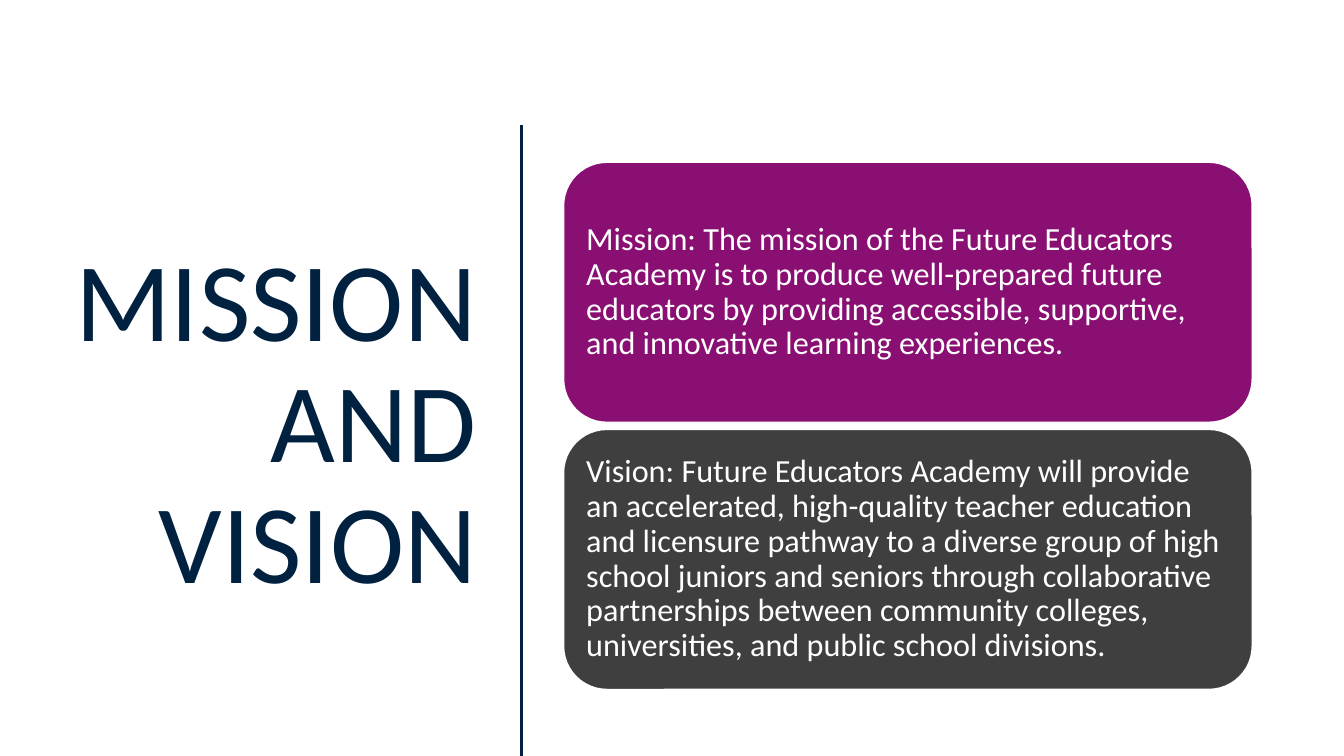
"""Build the Mission and Vision slide: a title, a divider and two statement cards."""
from dataclasses import dataclass

from lxml.etree import SubElement
from pptx import Presentation
from pptx.dml.color import RGBColor
from pptx.enum.shapes import MSO_CONNECTOR as Line, MSO_SHAPE as Shape
from pptx.enum.text import MSO_ANCHOR as Anchor, PP_ALIGN as Align
from pptx.oxml.ns import qn
from pptx.util import Inches, Pt

TITLE = "MISSION AND VISION"
STATEMENTS = [
    ("Mission: The mission of the Future Educators Academy is to produce "
     "well-prepared future educators by providing accessible, supportive, "
     "and innovative learning experiences.", "8A0F73"),
    ("Vision: Future Educators Academy will provide an accelerated, high-quality "
     "teacher education and licensure pathway to a diverse group of high school "
     "juniors and seniors through collaborative partnerships between community "
     "colleges, universities, and public school divisions.", "3F3F3F"),
]

SLIDE_SIZE = (13.33, 7.5)
TITLE_BOX = (0.52, 1.17, 4.31, 6.11)
DIVIDER_X, DIVIDER_TOP = 5.17, 1.24
CARD_LEFT, CARD_TOP, CARD_WIDTH, CARD_HEIGHT = 5.59, 1.61, 6.83, 2.58
CARD_GAP = 0.07


@dataclass(frozen=True)
class Theme:
    navy: str = "00213F"
    white: str = "FFFFFF"
    font: str = "Calibri"
    title_size: int = 80
    body_size: int = 23
    divider_width: int = 2
    outline_width: int = 1
    leading: float = 0.9


THEME = Theme()


def rgb(value):
    return RGBColor.from_string(value)


def write(holder, text, *, size, color, align=Align.LEFT, inset_y=0.1):
    frame = holder.text_frame
    frame.word_wrap = True
    frame.vertical_anchor = Anchor.MIDDLE
    frame.margin_left = frame.margin_right = Inches(0.1)
    frame.margin_top = frame.margin_bottom = Inches(inset_y)
    paragraph = frame.paragraphs[0]
    paragraph.alignment = align
    paragraph.line_spacing = THEME.leading
    run = paragraph.add_run()
    run.text = text
    run.font.name = THEME.font
    run.font.size = Pt(size)
    run.font.color.rgb = rgb(color)


def add_divider(slide):
    x = Inches(DIVIDER_X)
    divider = slide.shapes.add_connector(
        Line.STRAIGHT, x, Inches(DIVIDER_TOP), x, Inches(SLIDE_SIZE[1]))
    divider.line.color.rgb = rgb(THEME.navy)
    divider.line.width = Pt(THEME.divider_width)
    SubElement(divider._element.spPr, qn("a:effectLst"))


def add_card(slide, row, statement, color):
    top = CARD_TOP + row * (CARD_HEIGHT + CARD_GAP)
    card = slide.shapes.add_shape(
        Shape.ROUNDED_RECTANGLE,
        *map(Inches, (CARD_LEFT, top, CARD_WIDTH, CARD_HEIGHT)))
    card.shadow.inherit = False
    card.fill.solid()
    card.fill.fore_color.rgb = rgb(color)
    card.line.color.rgb = rgb(THEME.white)
    card.line.width = Pt(THEME.outline_width)
    write(card, statement, size=THEME.body_size, color=THEME.white)


def main():
    deck = Presentation()
    deck.slide_width, deck.slide_height = map(Inches, SLIDE_SIZE)
    slide = deck.slides.add_slide(deck.slide_layouts[6])
    title = slide.shapes.add_textbox(*map(Inches, TITLE_BOX))
    write(title, TITLE, size=THEME.title_size, color=THEME.navy,
          align=Align.RIGHT, inset_y=0.05)
    add_divider(slide)
    for row, (statement, color) in enumerate(STATEMENTS):
        add_card(slide, row, statement, color)
    deck.save("out.pptx")


if __name__ == "__main__":
    main()
